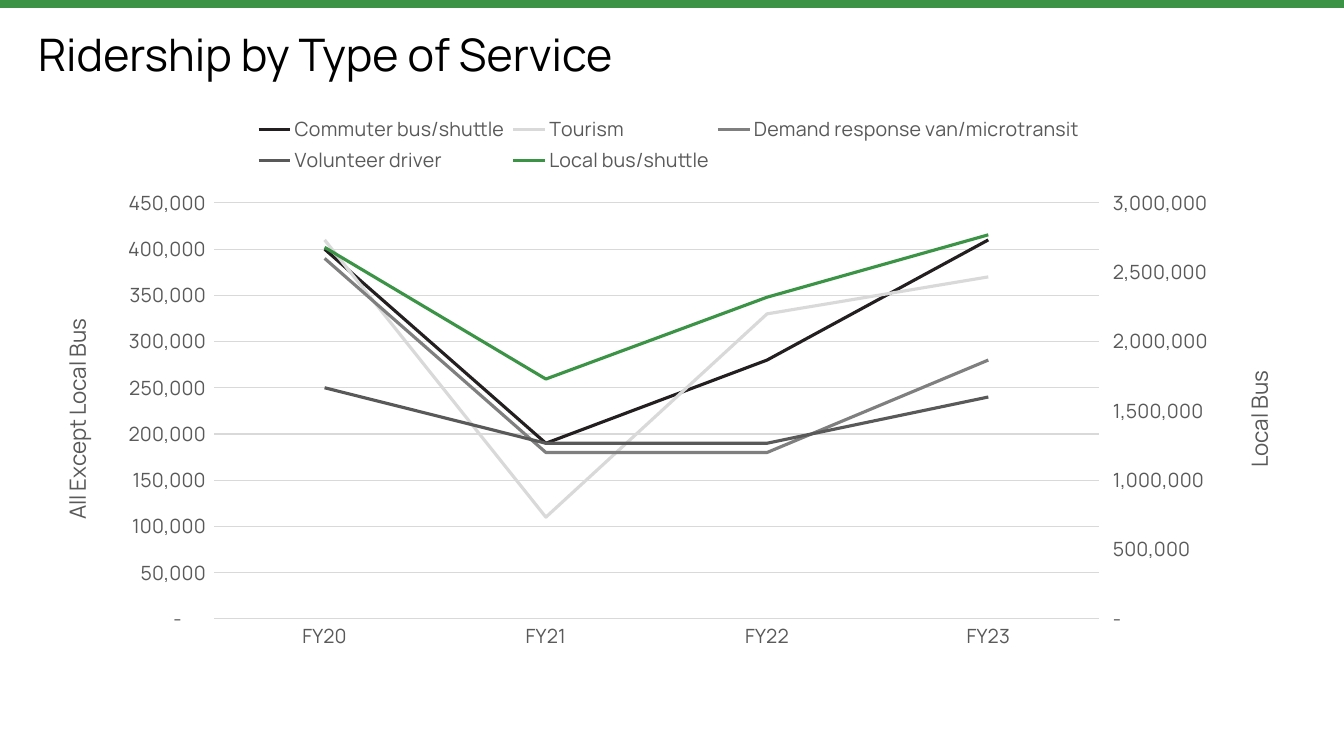
from copy import deepcopy

from pptx import Presentation
from pptx.chart.axis import ValueAxis
from pptx.chart.data import CategoryChartData
from pptx.dml.color import RGBColor
from pptx.enum.chart import XL_CHART_TYPE, XL_LEGEND_POSITION, XL_TICK_MARK
from pptx.enum.shapes import MSO_SHAPE
from pptx.enum.text import MSO_ANCHOR, PP_ALIGN
from pptx.oxml import parse_xml
from pptx.oxml.ns import nsdecls, qn
from pptx.util import Pt

EMU_PER_PX = 914400 / 100.8
CHART_WIDTH, CHART_HEIGHT = 1268, 557
FONT = "Manrope"
BLACK = RGBColor(0x00, 0x00, 0x00)
GREEN = RGBColor(0x3B, 0x93, 0x45)
CHARCOAL = RGBColor(0x23, 0x1F, 0x20)
DARK_GRAY = RGBColor(0x59, 0x59, 0x59)
MID_GRAY = RGBColor(0x7F, 0x7F, 0x7F)
LIGHT_GRAY = RGBColor(0xD9, 0xD9, 0xD9)
NUMBER_FORMAT = '_(* #,##0_);_(* \\(#,##0\\);_(* "-"??_);_(@_)'

YEARS = ["FY20", "FY21", "FY22", "FY23"]
RIDERSHIP = [
    ("Commuter bus/shuttle", (400000, 190000, 280000, 410000), CHARCOAL),
    ("Tourism", (410000, 110000, 330000, 370000), LIGHT_GRAY),
    ("Demand response van/microtransit", (390000, 180000, 180000, 280000), MID_GRAY),
    ("Volunteer driver", (250000, 190000, 190000, 240000), DARK_GRAY),
    ("Local bus/shuttle", (2680000, 1730000, 2320000, 2770000), GREEN),
]


def px(*lengths):
    return [round(length * EMU_PER_PX) for length in lengths]


def set_font(font, size, color):
    font.name = FONT
    font.size = Pt(size)
    font.bold = False
    font.color.rgb = color


def set_layout(element, index, box, inner=False):
    for layout in element.findall(qn("c:layout")):
        element.remove(layout)
    target = '<c:layoutTarget val="inner"/>' if inner else ""
    modes = "".join(f'<c:{side}Mode val="edge"/>' for side in "xy")
    values = "".join(
        f'<c:{side} val="{length / total}"/>'
        for side, length, total in zip("xywh", box, (CHART_WIDTH, CHART_HEIGHT) * 2)
    )
    element.insert(index, parse_xml(
        f'<c:layout {nsdecls("c")}><c:manualLayout>{target}{modes}{values}'
        "</c:manualLayout></c:layout>"
    ))


class RidershipSlide:
    def __init__(self, presentation):
        self.slide = presentation.slides.add_slide(presentation.slide_layouts[5])

    def add_bar(self, left, top, width, height, color):
        shape = self.slide.shapes.add_shape(
            MSO_SHAPE.RECTANGLE, *px(left, top, width, height)
        )
        shape.shadow.inherit = False
        shape.fill.solid()
        shape.fill.fore_color.rgb = color
        shape.line.fill.background()

    def add_title(self, text, left, top, width, height):
        title = self.slide.shapes.title
        title.left, title.top, title.width, title.height = px(left, top, width, height)
        frame = title.text_frame
        frame.text = text
        frame.word_wrap = True
        frame.vertical_anchor = MSO_ANCHOR.MIDDLE
        frame.margin_left = frame.margin_right = 0
        frame.margin_top = frame.margin_bottom = 0
        paragraph = frame.paragraphs[0]
        paragraph.alignment = PP_ALIGN.LEFT
        paragraph.line_spacing = 0.9
        set_font(paragraph.runs[0].font, 32, BLACK)

    def add_chart(self, left, top):
        data = CategoryChartData(number_format="#,##0")
        data.categories = YEARS
        for name, values, color in RIDERSHIP:
            data.add_series(name, values)
        chart = self.slide.shapes.add_chart(
            XL_CHART_TYPE.LINE, *px(left, top, CHART_WIDTH, CHART_HEIGHT), data
        ).chart
        chart.has_title = False
        set_font(chart.font, 10, BLACK)
        plot = chart.plots[0]
        plot.vary_by_categories = False
        for series, (name, values, color) in zip(plot.series, RIDERSHIP):
            series.smooth = False
            series.format.line.color.rgb = color
            series.format.line.width = Pt(2.25)

        category_axis = chart.category_axis
        category_axis.major_tick_mark = XL_TICK_MARK.NONE
        category_axis.format.line.color.rgb = LIGHT_GRAY
        category_axis.format.line.width = Pt(0.75)
        set_font(category_axis.tick_labels.font, 14, DARK_GRAY)

        main_axis = chart.value_axis
        local_axis = self.add_right_axis(chart)
        self.style_value_axis(main_axis, "All Except Local Bus", 450000, 50000, (18, 210))
        self.style_value_axis(local_axis, "Local Bus", 3000000, 500000, (1200, 262))
        main_axis.major_tick_mark = XL_TICK_MARK.NONE
        local_axis.major_tick_mark = XL_TICK_MARK.OUTSIDE
        main_axis.has_major_gridlines = True
        gridline = main_axis.major_gridlines.format.line
        gridline.color.rgb = LIGHT_GRAY
        gridline.width = Pt(0.75)
        local_axis.has_major_gridlines = False

        chart.has_legend = True
        legend = chart.legend
        legend.position = XL_LEGEND_POSITION.TOP
        legend.include_in_layout = False
        set_font(legend.font, 14, DARK_GRAY)
        set_layout(legend._element, 1, (212, 7, 838, 66))
        plot_area = chart._chartSpace.chart.plotArea
        set_layout(plot_area, 0, (176, 98, 885, 416), inner=True)

    def add_right_axis(self, chart):
        plot_area = chart._chartSpace.chart.plotArea
        left_lines = plot_area.find(qn("c:lineChart"))
        category = plot_area.find(qn("c:catAx"))
        value = plot_area.find(qn("c:valAx"))
        right_lines = deepcopy(left_lines)
        right_category, right_value = deepcopy(category), deepcopy(value)
        left_lines.remove(left_lines.findall(qn("c:ser"))[-1])
        for series in right_lines.findall(qn("c:ser"))[:-1]:
            right_lines.remove(series)
        left_lines.addnext(right_lines)
        value.addnext(right_value)
        right_value.addnext(right_category)

        identifiers = {
            category.find(qn("c:axId")).get("val"): "50010",
            value.find(qn("c:axId")).get("val"): "50020",
        }
        for element in (right_lines, right_category, right_value):
            for tag in ("c:axId", "c:crossAx"):
                for reference in element.findall(qn(tag)):
                    reference.set("val", identifiers[reference.get("val")])
        right_category.find(qn("c:delete")).set("val", "1")
        right_value.find(qn("c:axPos")).set("val", "r")
        right_value.find(qn("c:crosses")).set("val", "max")
        return ValueAxis(right_value)

    def style_value_axis(self, axis, text, maximum, unit, position):
        axis.minimum_scale = 0
        axis.maximum_scale = maximum
        axis.major_unit = unit
        axis.format.line.fill.background()
        axis.tick_labels.number_format = NUMBER_FORMAT
        axis.tick_labels.number_format_is_linked = False
        set_font(axis.tick_labels.font, 14, DARK_GRAY)
        frame = axis.axis_title.text_frame
        frame.text = text
        set_font(frame.paragraphs[0].runs[0].font, 16, DARK_GRAY)
        title = axis.axis_title._element
        body = title.find(".//" + qn("a:bodyPr"))
        body.set("rot", "-5400000")
        body.set("vert", "horz")
        set_layout(title, 1, position)


def main():
    presentation = Presentation()
    presentation.slide_width, presentation.slide_height = px(1344, 756)
    ridership = RidershipSlide(presentation)
    ridership.add_bar(0, 0, 1344, 8, GREEN)
    ridership.add_title("Ridership by Type of Service", 38, 33, 1268, 48)
    ridership.add_chart(38, 105)
    presentation.save("out.pptx")


if __name__ == "__main__":
    main()
